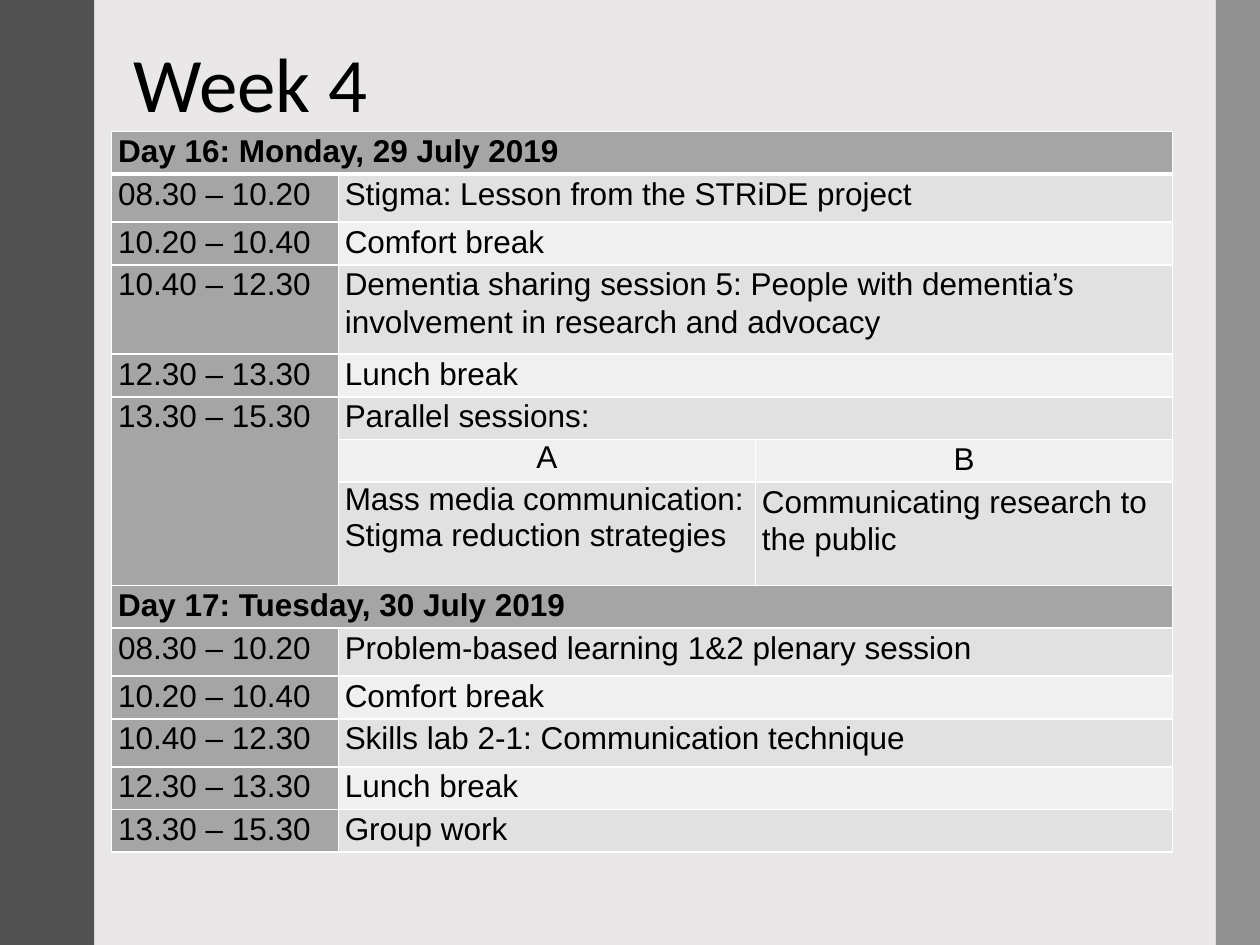
from dataclasses import dataclass

from lxml import etree
from pptx import Presentation
from pptx.dml.color import RGBColor
from pptx.enum.shapes import MSO_SHAPE
from pptx.enum.text import MSO_ANCHOR, MSO_AUTO_SIZE, PP_ALIGN
from pptx.oxml.ns import qn
from pptx.util import Cm, Pt

RECTANGLE = MSO_SHAPE.RECTANGLE
MIDDLE = MSO_ANCHOR.MIDDLE
NO_AUTOFIT = MSO_AUTO_SIZE.NONE
LEFT, CENTER = PP_ALIGN.LEFT, PP_ALIGN.CENTER
TITLE_ONLY = 5


@dataclass(frozen=True)
class Theme:
    background: str = "E9E7E7"
    left_band: str = "525252"
    right_band: str = "595959"
    text: str = "000000"
    label_fill: str = "A5A5A5"
    odd_fill: str = "E1E1E1"
    even_fill: str = "F0F0F0"
    border: str = "FFFFFF"
    title_font: str = "Calibri"
    body_font: str = "Arial"
    title_size: int = 44
    body_size: int = 18
    thin: float = 1
    thick: float = 3


THEME = Theme()
SHORT, MEDIUM, TALL, TALLEST = 0.86, 0.97, 1.8, 2.08
COLUMN_WIDTHS = (4.57, 8.41, 8.41)

# Each row: height, label, sessions
SCHEDULE = (
    (SHORT, "Day 16: Monday, 29 July 2019", ()),
    (MEDIUM, "08.30 – 10.20", ("Stigma: Lesson from the STRiDE project",)),
    (SHORT, "10.20 – 10.40", ("Comfort break",)),
    (TALL, "10.40 – 12.30", ("Dementia sharing session 5: People with dementia’s "
                             "involvement in research and advocacy",)),
    (SHORT, "12.30 – 13.30", ("Lunch break",)),
    (SHORT, "13.30 – 15.30", ("Parallel sessions:",)),
    (SHORT, "", ("A", "B")),
    (TALLEST, "", ("Mass media communication: Stigma reduction strategies",
                   "Communicating research to the public")),
    (SHORT, "Day 17: Tuesday, 30 July 2019", ()),
    (MEDIUM, "08.30 – 10.20", ("Problem-based learning 1&2 plenary session",)),
    (SHORT, "10.20 – 10.40", ("Comfort break",)),
    (MEDIUM, "10.40 – 12.30", ("Skills lab 2-1: Communication technique",)),
    (SHORT, "12.30 – 13.30", ("Lunch break",)),
    (SHORT, "13.30 – 15.30", ("Group work",)),
)


def write_text(frame, text, *, font=THEME.body_font, size=THEME.body_size,
               bold=False, align=LEFT, spacing=1.07):
    paragraph = frame.paragraphs[0]
    paragraph.alignment = align
    paragraph.line_spacing = spacing
    run = paragraph.add_run()
    run.text = text
    run.font.name = font
    run.font.size = Pt(size)
    run.font.bold = bold
    run.font.color.rgb = RGBColor.from_string(THEME.text)


def add_title(slide, text):
    title = slide.shapes.title
    title.left, title.top, title.width, title.height = (
        Cm(2.44), Cm(0.56), Cm(20.55), Cm(2.41))
    frame = title.text_frame
    frame.auto_size = NO_AUTOFIT
    frame.vertical_anchor = MIDDLE
    write_text(frame, text, font=THEME.title_font, size=THEME.title_size, spacing=0.9)


def add_band(slide, left, width, color, opacity=100):
    band = slide.shapes.add_shape(RECTANGLE, Cm(left), 0, Cm(width), Cm(19.05))
    band.shadow.inherit = False
    band.line.fill.background()
    band.fill.solid()
    band.fill.fore_color.rgb = RGBColor.from_string(color)
    if opacity < 100:
        color_xml = band.fill._xPr.find(qn("a:solidFill"))[0]
        etree.SubElement(color_xml, qn("a:alpha"), val=str(opacity * 1000))


def set_borders(cell, top, bottom):
    properties = cell._tc.get_or_add_tcPr()
    widths = {"L": THEME.thin, "R": THEME.thin, "T": top, "B": bottom}
    for side, width in widths.items():
        line = etree.SubElement(properties, qn(f"a:ln{side}"), w=str(Pt(width)))
        fill = etree.SubElement(line, qn("a:solidFill"))
        etree.SubElement(fill, qn("a:srgbClr"), val=THEME.border)


def style_cell(cell, row, color):
    cell.margin_left = cell.margin_right = Cm(0.13)
    cell.margin_top = cell.margin_bottom = 0
    set_borders(cell,
                top=THEME.thick if row == 1 else THEME.thin,
                bottom=THEME.thick if row == 0 else THEME.thin)
    cell.fill.solid()
    cell.fill.fore_color.rgb = RGBColor.from_string(color)


def fill_row(table, row, label, sessions):
    session_fill = THEME.odd_fill if row % 2 else THEME.even_fill
    for column in range(len(COLUMN_WIDTHS)):
        is_label = column == 0 or not sessions
        style_cell(table.cell(row, column), row,
                   THEME.label_fill if is_label else session_fill)
    if label:
        write_text(table.cell(row, 0).text_frame, label, bold=not sessions)
    if not sessions:
        table.cell(row, 0).merge(table.cell(row, 2))
    elif len(sessions) == 1:
        table.cell(row, 1).merge(table.cell(row, 2))
    for column, session in enumerate(sessions, start=1):
        first_of_pair = column == 1 and len(sessions) == 2
        write_text(table.cell(row, column).text_frame, session,
                   align=CENTER if len(session) == 1 else LEFT,
                   spacing=1.0 if first_of_pair else 1.07)


def add_schedule(slide):
    frame = slide.shapes.add_table(
        len(SCHEDULE), len(COLUMN_WIDTHS), Cm(2.25), Cm(2.65),
        Cm(sum(COLUMN_WIDTHS)), Cm(sum(height for height, *_ in SCHEDULE)))
    table = frame.table
    for column, width in zip(table.columns, COLUMN_WIDTHS):
        column.width = Cm(width)
    for row, (height, label, sessions) in enumerate(SCHEDULE):
        table.rows[row].height = Cm(height)
        fill_row(table, row, label, sessions)
    parallel = [row for row, (_, label, _) in enumerate(SCHEDULE) if not label]
    table.cell(parallel[0] - 1, 0).merge(table.cell(parallel[-1], 0))


def main():
    presentation = Presentation()
    presentation.slide_width, presentation.slide_height = Cm(25.4), Cm(19.05)
    slide = presentation.slides.add_slide(presentation.slide_layouts[TITLE_ONLY])
    slide.background.fill.solid()
    slide.background.fill.fore_color.rgb = RGBColor.from_string(THEME.background)
    add_title(slide, "Week 4")
    add_band(slide, 0, 1.9, THEME.left_band)
    add_band(slide, 24.51, 0.97, THEME.right_band, opacity=60)
    add_schedule(slide)
    presentation.save("out.pptx")


if __name__ == "__main__":
    main()
